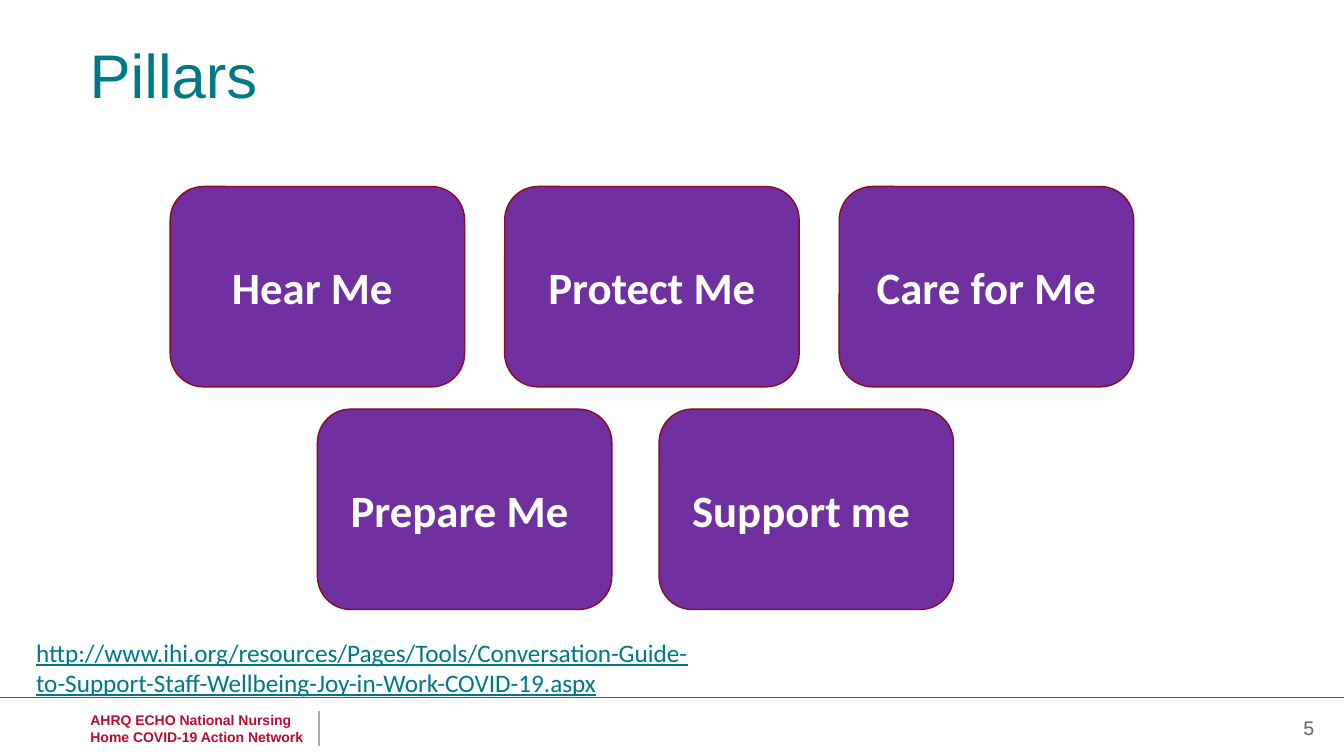
from lxml import etree
from pptx import Presentation
from pptx.dml.color import RGBColor
from pptx.enum.shapes import MSO_CONNECTOR, MSO_SHAPE
from pptx.enum.text import MSO_ANCHOR, PP_ALIGN
from pptx.oxml.ns import qn
from pptx.util import Cm, Pt

LEFT, CENTER, RIGHT = PP_ALIGN.LEFT, PP_ALIGN.CENTER, PP_ALIGN.RIGHT
TOP, MIDDLE = MSO_ANCHOR.TOP, MSO_ANCHOR.MIDDLE
ROUNDED = MSO_SHAPE.ROUNDED_RECTANGLE
STRAIGHT = MSO_CONNECTOR.STRAIGHT

SLIDE_W, SLIDE_H = 33.87, 19.05
CARD_W, CARD_H = 7.42, 5.05
# Each row: left of first card, top, horizontal step, labels.
# The trailing spaces count towards the centring.
PILLAR_ROWS = [
    (4.29, 4.7, 8.43, ["Hear Me ", "Protect Me", "Care for Me"]),
    (8.0, 10.31, 8.61, ["Prepare Me ", "Support me "]),
]
GUIDE_URL = ("http://www.ihi.org/resources/Pages/Tools/Conversation-Guide-"
             "to-Support-Staff-Wellbeing-Joy-in-Work-COVID-19.aspx")


def rgb(value):
    return RGBColor.from_string(value)


class PillarSlide:
    teal, purple, crimson, red = "007986", "7030A0", "8A0923", "BA0C2F"
    grey, silver, white = "636669", "AFABAB", "FFFFFF"
    heading, body = "Arial", "Calibri"

    def __init__(self, prs):
        self.s = prs.slides.add_slide(prs.slide_layouts[6])

    def fill_text(self, sp, lines, font, size, color, align=LEFT, anchor=TOP,
                  bold=False, underline=False, spacing=None):
        """Fill a shape with one paragraph per line."""
        tf = sp.text_frame
        tf.word_wrap = True
        tf.vertical_anchor = anchor
        for i, line in enumerate(lines):
            p = tf.add_paragraph() if i else tf.paragraphs[0]
            p.alignment = align
            if spacing:
                p.line_spacing = spacing
            r = p.add_run()
            r.text = line
            r.font.name = font
            r.font.size = Pt(size)
            r.font.bold = bold
            r.font.underline = underline
            r.font.color.rgb = rgb(color)

    def text(self, x, y, w, h, lines, font, size, color, **style):
        sp = self.s.shapes.add_textbox(Cm(x), Cm(y), Cm(w), Cm(h))
        self.fill_text(sp, lines, font, size, color, **style)

    def card(self, x, y, label):
        sp = self.s.shapes.add_shape(ROUNDED, Cm(x), Cm(y), Cm(CARD_W), Cm(CARD_H))
        sp.shadow.inherit = False
        sp.fill.solid()
        sp.fill.fore_color.rgb = rgb(self.purple)
        sp.line.color.rgb = rgb(self.crimson)
        sp.line.width = Pt(1)
        self.fill_text(sp, [label], self.body, 32, self.white,
                       align=CENTER, anchor=MIDDLE, bold=True)

    def rule(self, x1, y1, x2, y2, color, width):
        line = self.s.shapes.add_connector(STRAIGHT, Cm(x1), Cm(y1), Cm(x2), Cm(y2))
        line.line.color.rgb = rgb(color)
        line.line.width = Pt(width)
        etree.SubElement(line._element.spPr, qn("a:effectLst"))


def main():
    prs = Presentation()
    prs.slide_width, prs.slide_height = Cm(SLIDE_W), Cm(SLIDE_H)
    slide = PillarSlide(prs)

    slide.rule(0, 17.58, SLIDE_W, 17.58, slide.teal, 0.5)
    slide.text(20.75, 17.91, 12.62, 0.86, ["5"], slide.heading, 14,
               slide.grey, align=RIGHT)
    slide.text(2.03, 17.81, 8.89, 1.12,
               ["AHRQ ECHO National Nursing", "Home COVID-19 Action Network"],
               slide.heading, 10, slide.red, bold=True)
    slide.rule(8.05, 17.91, 8.05, 18.8, slide.silver, 1.5)

    slide.text(2.01, 1.02, 29.21, 3.68, ["Pillars"], slide.heading, 44,
               slide.teal, spacing=0.9)
    for left, top, step, labels in PILLAR_ROWS:
        for i, label in enumerate(labels):
            slide.card(left + i * step, top, label)
    slide.text(0.66, 15.93, 16.94, 1.8, [GUIDE_URL], slide.body, 18,
               slide.teal, underline=True)

    prs.save("out.pptx")


if __name__ == "__main__":
    main()
